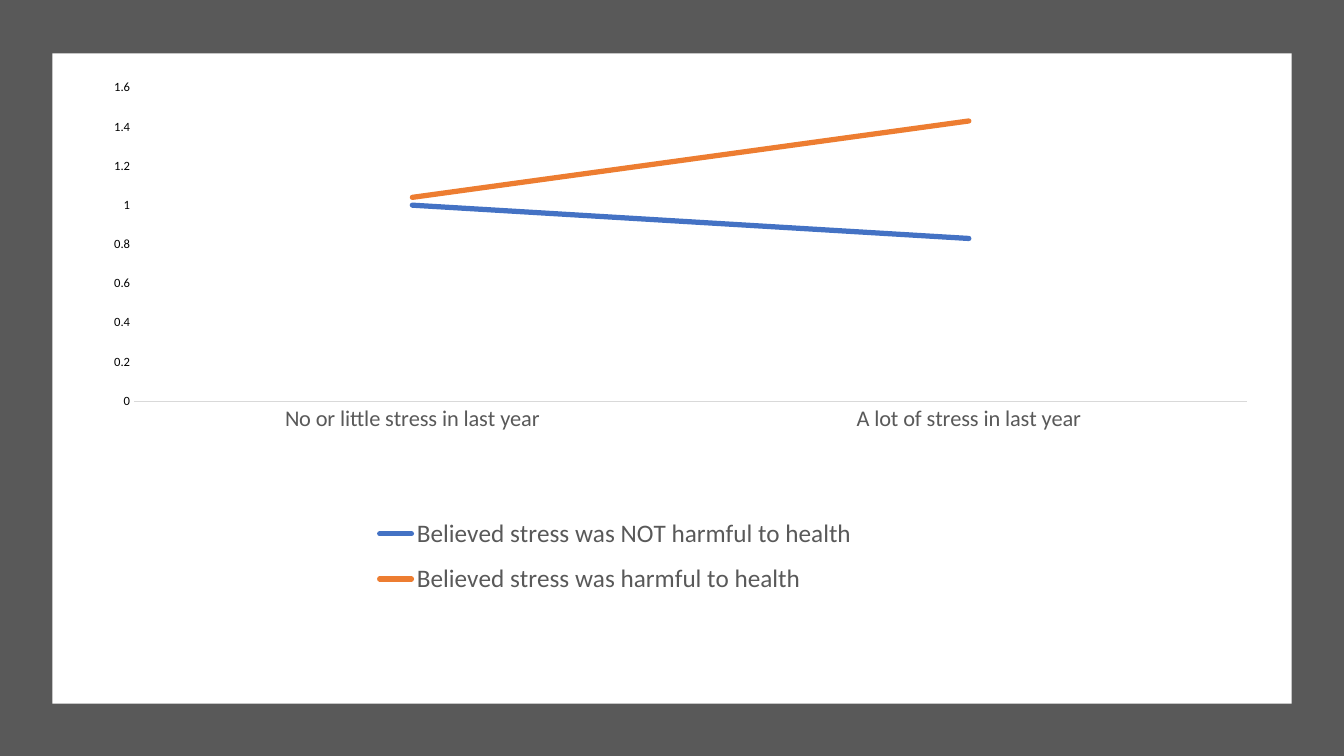
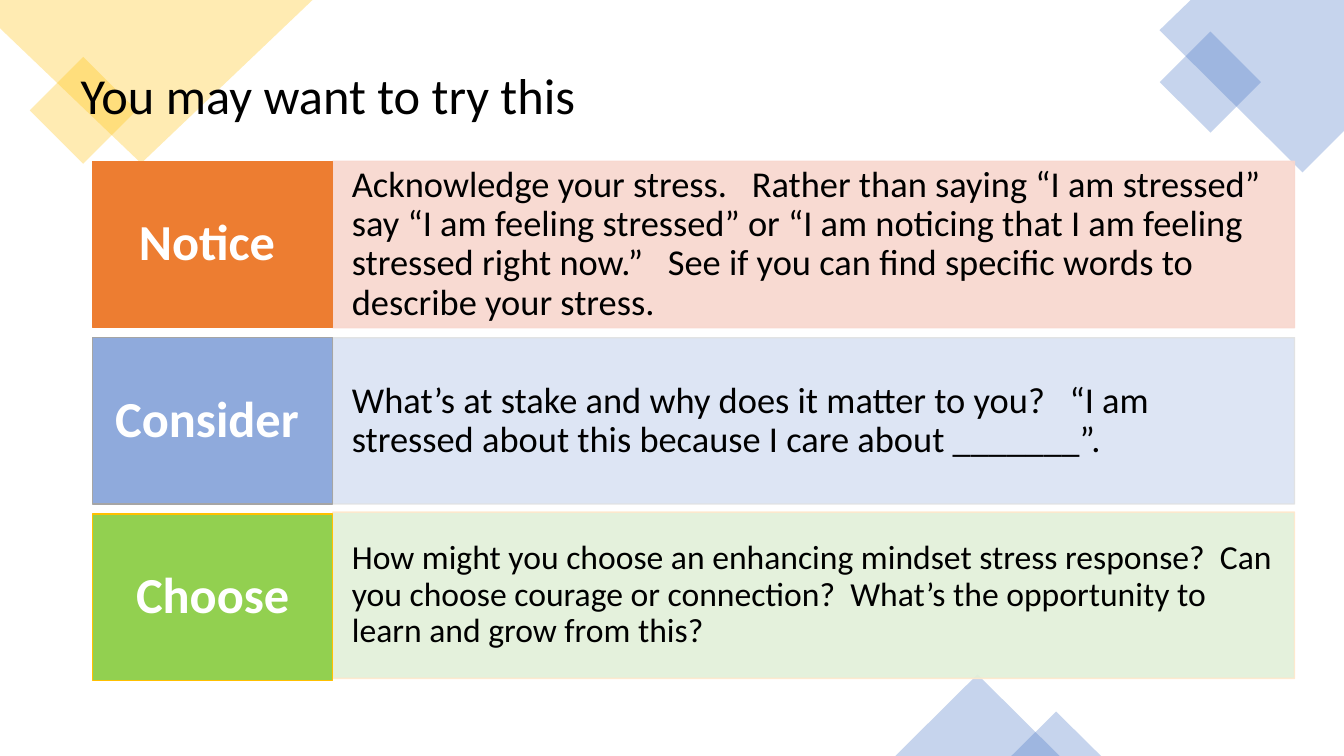
from dataclasses import dataclass

from lxml.etree import SubElement
from pptx import Presentation
from pptx.chart.data import CategoryChartData
from pptx.dml.color import RGBColor
from pptx.enum.chart import XL_CHART_TYPE, XL_LEGEND_POSITION, XL_TICK_MARK
from pptx.enum.shapes import MSO_SHAPE
from pptx.enum.text import MSO_ANCHOR, MSO_AUTO_SIZE, PP_ALIGN
from pptx.oxml import parse_xml
from pptx.oxml.ns import nsdecls, qn
from pptx.util import Inches, Pt


# Shared colours and type sizes
@dataclass(frozen=True)
class Theme:
    font: str = "Calibri"
    black: str = "000000"
    white: str = "FFFFFF"
    gray: str = "595959"
    axis: str = "D9D9D9"
    blue: str = "4472C4"
    orange: str = "ED7D31"
    gold: str = "FFC000"
    title_size: int = 36
    label_size: int = 36
    legend_size: int = 18
    category_size: int = 16
    value_size: int = 9
    decor_alpha: int = 30
    panel_alpha: int = 90


THEME = Theme()
TITLE_ONLY, BLANK = 5, 6
CHART_WIDTH, CHART_HEIGHT = 11.93, 6.09

# Label, text, text size, label fill, label line, panel fill, panel line,
# panel lift above its label
STEPS = [
    ("Notice ",
     "Acknowledge your stress.   Rather than saying “I am stressed” say "
     "“I am feeling stressed” or “I am noticing that I am feeling stressed "
     "right now.”   See if you can find specific words to describe your stress.",
     26, "ED7D31", "ED7D31", "F8D7CE", "F8D7CE", 0),
    ("Consider ",
     "What’s at stake and why does it matter to you?   “I am stressed about "
     "this because I care about _______”.",
     26, "8FAADC", "A5A5A5", "DAE3F3", "E1E1E1", 0),
    ("Choose",
     "How might you choose an enhancing mindset stress response?  Can you "
     "choose courage or connection?  What’s the opportunity to learn and "
     "grow from this?",
     24, "92D050", "FFC000", "E2F0D9", "FFE8CC", 0.02),
]


# Formatting helpers
def rgb(color):
    return RGBColor.from_string(color)


def set_font(font, size, color, bold=False):
    font.name = THEME.font
    font.size = Pt(size)
    font.bold = bold
    font.color.rgb = rgb(color)


def paint(fill_format, color, alpha, holder):
    """Apply a solid fill; holder is the XML element that contains it."""
    fill_format.solid()
    fill_format.fore_color.rgb = rgb(color)
    if alpha < 100:
        color_tag = holder.find(qn("a:solidFill")).find(qn("a:srgbClr"))
        SubElement(color_tag, qn("a:alpha"), val=str(alpha * 1000))


def style_shape(shape, fill, line=None, alpha=100):
    shape.shadow.inherit = False
    properties = shape._element.spPr
    paint(shape.fill, fill, alpha, properties)
    if line:
        shape.line.width = Pt(1)
        paint(shape.line.fill, line, alpha, properties.find(qn("a:ln")))
    else:
        shape.line.fill.background()
    return shape


def add_block(page, left, top, width, height, fill, kind=MSO_SHAPE.RECTANGLE,
              line=None, alpha=100, rotation=0):
    shape = page.shapes.add_shape(
        kind, Inches(left), Inches(top), Inches(width), Inches(height))
    shape.rotation = rotation
    return style_shape(shape, fill, line, alpha)


def add_outline(page, points, fill):
    corners = [(Inches(x), Inches(y)) for x, y in points]
    builder = page.shapes.build_freeform(*corners[0])
    builder.add_line_segments(corners[1:], close=True)
    style_shape(builder.convert_to_shape(), fill, alpha=THEME.decor_alpha)


def write(shape, text, size, color=THEME.black, bold=False,
          align=PP_ALIGN.LEFT, inset=0.1):
    frame = shape.text_frame
    frame.word_wrap = True
    frame.auto_size = MSO_AUTO_SIZE.NONE
    frame.vertical_anchor = MSO_ANCHOR.MIDDLE
    frame.margin_left = frame.margin_right = Inches(inset)
    frame.margin_top = frame.margin_bottom = Inches(0.05)
    para = frame.paragraphs[0]
    para.alignment = align
    para.line_spacing = 0.9
    span = para.add_run()
    span.text = text
    set_font(span.font, size, color, bold)


# Chart parts
def place_part(part, index, left, top, width, height, target=""):
    """Give a chart part a manual layout, in inches within the chart."""
    for old in part.findall(qn("c:layout")):
        part.remove(old)
    part.insert(index, parse_xml(
        f"<c:layout {nsdecls('c')}><c:manualLayout>{target}"
        '<c:xMode val="edge"/><c:yMode val="edge"/>'
        f'<c:x val="{left / CHART_WIDTH}"/><c:y val="{top / CHART_HEIGHT}"/>'
        f'<c:w val="{width / CHART_WIDTH}"/>'
        f'<c:h val="{height / CHART_HEIGHT}"/>'
        "</c:manualLayout></c:layout>"))


def style_axis(axis, size, color):
    axis.has_major_gridlines = False
    axis.major_tick_mark = axis.minor_tick_mark = XL_TICK_MARK.NONE
    set_font(axis.tick_labels.font, size, color)


def add_stress_chart(page):
    data = CategoryChartData()
    data.categories = ["No or little stress in last year",
                       "A lot of stress in last year"]
    data.add_series("Believed stress was NOT harmful to health", (1, 0.83))
    data.add_series("Believed stress was harmful to health", (1.04, 1.43))
    chart = page.shapes.add_chart(
        XL_CHART_TYPE.LINE, Inches(0.7), Inches(0.7), Inches(CHART_WIDTH),
        Inches(CHART_HEIGHT), data).chart
    set_font(chart.font, 10, THEME.black)
    chart.has_title = False

    # Lines
    chart.plots[0].vary_by_categories = False
    for series, color in zip(chart.plots[0].series, (THEME.blue, THEME.orange)):
        series.smooth = False
        series.format.line.width = Pt(3.75)
        series.format.line.color.rgb = rgb(color)
        series._element.find(qn("c:spPr")).find(qn("a:ln")).set("cap", "rnd")

    # Axes
    style_axis(chart.category_axis, THEME.category_size, THEME.gray)
    chart.category_axis.format.line.width = Pt(0.75)
    chart.category_axis.format.line.color.rgb = rgb(THEME.axis)
    values = chart.value_axis
    style_axis(values, THEME.value_size, THEME.black)
    values.format.line.fill.background()
    values.minimum_scale, values.maximum_scale = 0, 1.6
    values.major_unit = 0.2

    # Legend and plot positions
    chart.has_legend = True
    legend = chart.legend
    legend.position = XL_LEGEND_POSITION.BOTTOM
    legend.include_in_layout = False
    set_font(legend.font, THEME.legend_size, THEME.gray)
    place_part(legend._element, 1, 2.42, 4.3, 5.97, 1.04)
    plot_area = chart._chartSpace.xpath("c:chart/c:plotArea")[0]
    place_part(plot_area, 0, 0.63, 0.17, 11.04, 3.11,
               '<c:layoutTarget val="inner"/>')


# Slide parts
def add_corner_decor(page):
    alpha = THEME.decor_alpha
    for left, top, side, color in ((0.45, 0.72, 0.75, THEME.gold),
                                   (11.65, 0.46, 0.71, THEME.blue)):
        add_block(page, left, top, side, side, color, alpha=alpha, rotation=45)
    add_outline(page, [(0, 0), (3.1, 0), (1.4, 1.62), (0, 0.28)], THEME.gold)
    add_outline(page, [(11.81, 0), (13.33, 0), (13.33, 1.3), (12.92, 1.71),
                       (11.5, 0.3)], THEME.blue)
    for left, top, width, height in ((8.88, 6.69, 1.63, 0.81),
                                     (10.03, 7.06, 0.89, 0.44)):
        add_block(page, left, top, width, height, THEME.blue,
                  kind=MSO_SHAPE.ISOSCELES_TRIANGLE, alpha=alpha)


def add_title(page, text):
    title = page.shapes.title
    title.left, title.top = Inches(0.7), Inches(0.35)
    title.width, title.height = Inches(11.93), Inches(1.24)
    write(title, text, THEME.title_size)
    page.shapes._spTree.append(title._element)  # in front of the decor


def add_step(page, top, step):
    (label, text, size, label_fill, label_line,
     panel_fill, panel_line, lift) = step
    height = 1.65
    panel = add_block(page, 3.3, top - lift, 9.54, height, panel_fill,
                      line=panel_line, alpha=THEME.panel_alpha)
    write(panel, text, size, inset=0.19)
    tag = add_block(page, 0.92, top, 2.38, height, label_fill, line=label_line)
    write(tag, label, THEME.label_size, color=THEME.white, bold=True,
          align=PP_ALIGN.CENTER, inset=0.13)


# Slides
def build_chart_page(deck):
    page = deck.slides.add_slide(deck.slide_layouts[BLANK])
    add_block(page, 0, 0, 13.33, 7.5, THEME.gray)
    add_block(page, 0.52, 0.53, 12.29, 6.45, THEME.white)
    add_stress_chart(page)


def build_steps_page(deck):
    page = deck.slides.add_slide(deck.slide_layouts[TITLE_ONLY])
    add_corner_decor(page)
    add_title(page, "You may want to try this")
    for index, step in enumerate(STEPS):
        add_step(page, 1.6 + 1.75 * index, step)


def main():
    deck = Presentation()
    deck.slide_width, deck.slide_height = Inches(13.33), Inches(7.5)
    build_chart_page(deck)
    build_steps_page(deck)
    deck.save("out.pptx")


if __name__ == "__main__":
    main()
